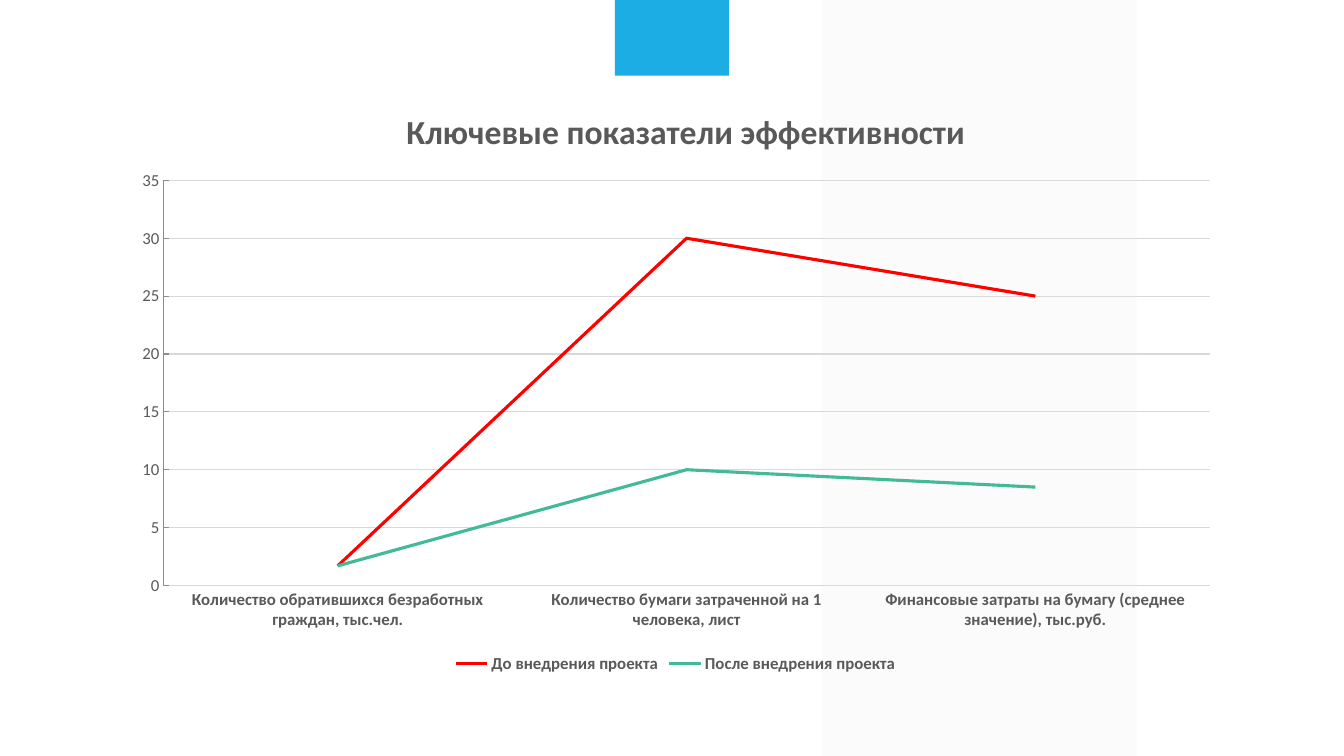
import dataclasses

import pptx
import pptx.chart.data
import pptx.dml.color
import pptx.enum.chart
import pptx.enum.shapes
import pptx.oxml
import pptx.oxml.ns
import pptx.util
from pptx.util import Inches


@dataclasses.dataclass(frozen=True)
class Theme:
    """Colours, font and type sizes of the slide."""
    font: str = "Calibri"
    text: str = "595959"
    accent: str = "1CADE4"
    band: str = "F2F2F2"
    grid: str = "D9D9D9"
    axis: str = "8C8C8C"
    before: str = "FF0000"
    after: str = "42BA97"
    title_size: int = 24
    label_size: int = 12
    thin: float = 0.75
    thick: float = 2.25


THEME = Theme()
INDICATORS = (
    "Количество обратившихся безработных граждан, тыс.чел.",
    "Количество бумаги затраченной на 1 человека, лист",
    "Финансовые затраты на бумагу (среднее значение), тыc.руб.",
)
STAGES = (
    ("До внедрения проекта", (1.7, 30, 25), THEME.before),
    ("После внедрения проекта", (1.7, 10, 8.5), THEME.after),
)


def rgb(code):
    """Turn a hex code into a colour."""
    return pptx.dml.color.RGBColor.from_string(code)


def style_font(font, size=THEME.label_size, bold=False, color=THEME.text):
    """Format a font with the theme typeface."""
    font.name = THEME.font
    font.size = pptx.util.Pt(size)
    font.bold = bold
    font.color.rgb = rgb(color)


def write_text(frame, text, **style):
    """Put one formatted run into a text frame."""
    run = frame.paragraphs[0].add_run()
    run.text = text
    style_font(run.font, **style)


def style_line(line, color, width=THEME.thin):
    """Set the colour and width of a line."""
    line.color.rgb = rgb(color)
    line.width = pptx.util.Pt(width)


def add_block(slide, kind, box, color, opacity=100):
    """Add a borderless filled shape."""
    block = slide.shapes.add_shape(kind, *map(Inches, box))
    block.shadow.inherit = False
    block.fill.solid()
    block.fill.fore_color.rgb = rgb(color)
    block.line.fill.background()
    if opacity < 100:
        tint = block.element.find(".//" + pptx.oxml.ns.qn("a:srgbClr"))
        alpha = tint.makeelement(pptx.oxml.ns.qn("a:alpha"), {"val": str(opacity * 1000)})
        tint.append(alpha)
    return block


def set_layout(part, index, inner=False, **places):
    """Fix a chart part at fractions of the chart area."""
    for automatic in part.findall(pptx.oxml.ns.qn("c:layout")):
        part.remove(automatic)
    target = '<c:layoutTarget val="inner"/>' if inner else ""
    values = "".join(f'<c:{key} val="{value:.4f}"/>' for key, value in places.items())
    part.insert(index, pptx.oxml.parse_xml(
        f'<c:layout {pptx.oxml.ns.nsdecls("c")}><c:manualLayout>{target}'
        f'<c:xMode val="edge"/><c:yMode val="edge"/>{values}'
        "</c:manualLayout></c:layout>"))


def draw_background(slide, width, height):
    """Draw the pale band and the accent tab."""
    shapes = pptx.enum.shapes.MSO_SHAPE
    band = add_block(slide, shapes.PARALLELOGRAM, (8.15, 0, 3.12, height), THEME.band, 30)
    band.adjustments[0] = 0
    tab_width = 1.13
    add_block(slide, shapes.RECTANGLE, ((width - tab_width) / 2, 0, tab_width, 0.75), THEME.accent)


def style_axes(chart):
    """Format both axes and the gridlines."""
    marks = pptx.enum.chart.XL_TICK_MARK
    indicators, amounts = chart.category_axis, chart.value_axis
    for axis, mark, color, bold in (
        (indicators, marks.NONE, THEME.grid, True),
        (amounts, marks.INSIDE, THEME.axis, False),
    ):
        axis.major_tick_mark = mark
        axis.minor_tick_mark = marks.NONE
        style_line(axis.format.line, color)
        style_font(axis.tick_labels.font, bold=bold)
    amounts.minimum_scale, amounts.maximum_scale, amounts.major_unit = 0, 35, 5
    amounts.has_major_gridlines = True
    style_line(amounts.major_gridlines.format.line, THEME.grid)


def draw_indicators(slide, left, top, width, height):
    """Draw the line chart of key indicators in the given box."""
    data = pptx.chart.data.CategoryChartData()
    data.categories = INDICATORS
    for name, values, _ in STAGES:
        data.add_series(name, values)
    chart = slide.shapes.add_chart(
        pptx.enum.chart.XL_CHART_TYPE.LINE,
        *map(Inches, (left, top, width, height)), data).chart
    style_font(chart.font)

    chart.has_title = True
    write_text(chart.chart_title.text_frame, "Ключевые показатели эффективности",
               size=THEME.title_size, bold=True)
    title = chart.element.find(".//" + pptx.oxml.ns.qn("c:title"))
    set_layout(title, 1, x=2.78 / width, y=0.23 / height)
    plot_area = chart.element.find(".//" + pptx.oxml.ns.qn("c:plotArea"))
    set_layout(plot_area, 0, inner=True, x=0.43 / width, y=1 / height,
               w=10.38 / width, h=4.02 / height)

    chart.has_legend = True
    chart.legend.position = pptx.enum.chart.XL_LEGEND_POSITION.BOTTOM
    chart.legend.include_in_layout = False
    style_font(chart.legend.font, bold=True)
    style_axes(chart)

    plot = chart.plots[0]
    plot.vary_by_categories = False
    for series, (_, _, color) in zip(plot.series, STAGES):
        series.smooth = False
        series.marker.style = pptx.enum.chart.XL_MARKER_STYLE.NONE
        style_line(series.format.line, color, THEME.thick)


def main():
    """Build and save the slide."""
    deck = pptx.Presentation()
    width, height = 13.33, 7.5
    deck.slide_width, deck.slide_height = Inches(width), Inches(height)
    slide = deck.slides.add_slide(deck.slide_layouts[6])
    draw_background(slide, width, height)
    draw_indicators(slide, 1.19, 0.79, 11.02, 5.93)
    deck.save("out.pptx")


if __name__ == "__main__":
    main()
